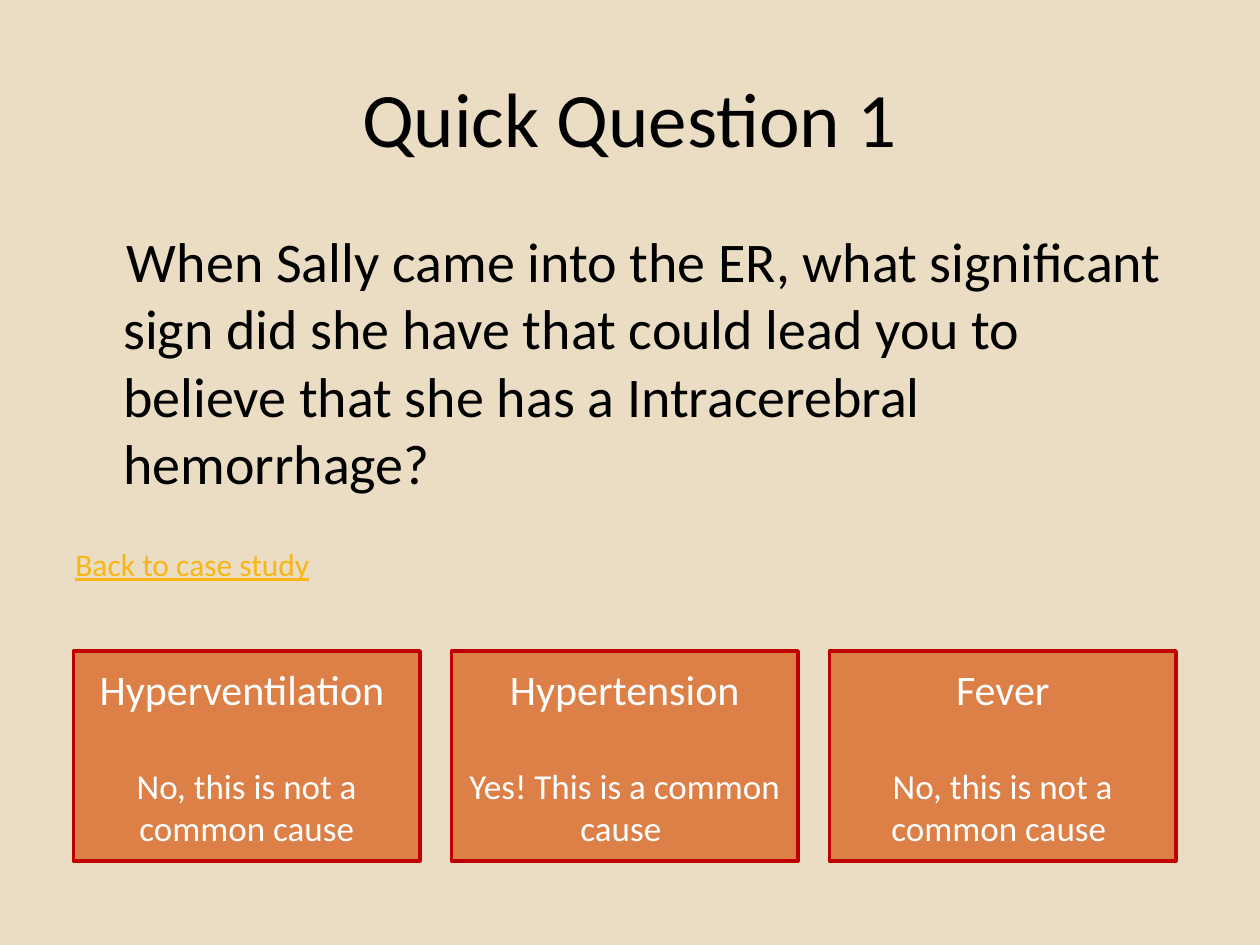
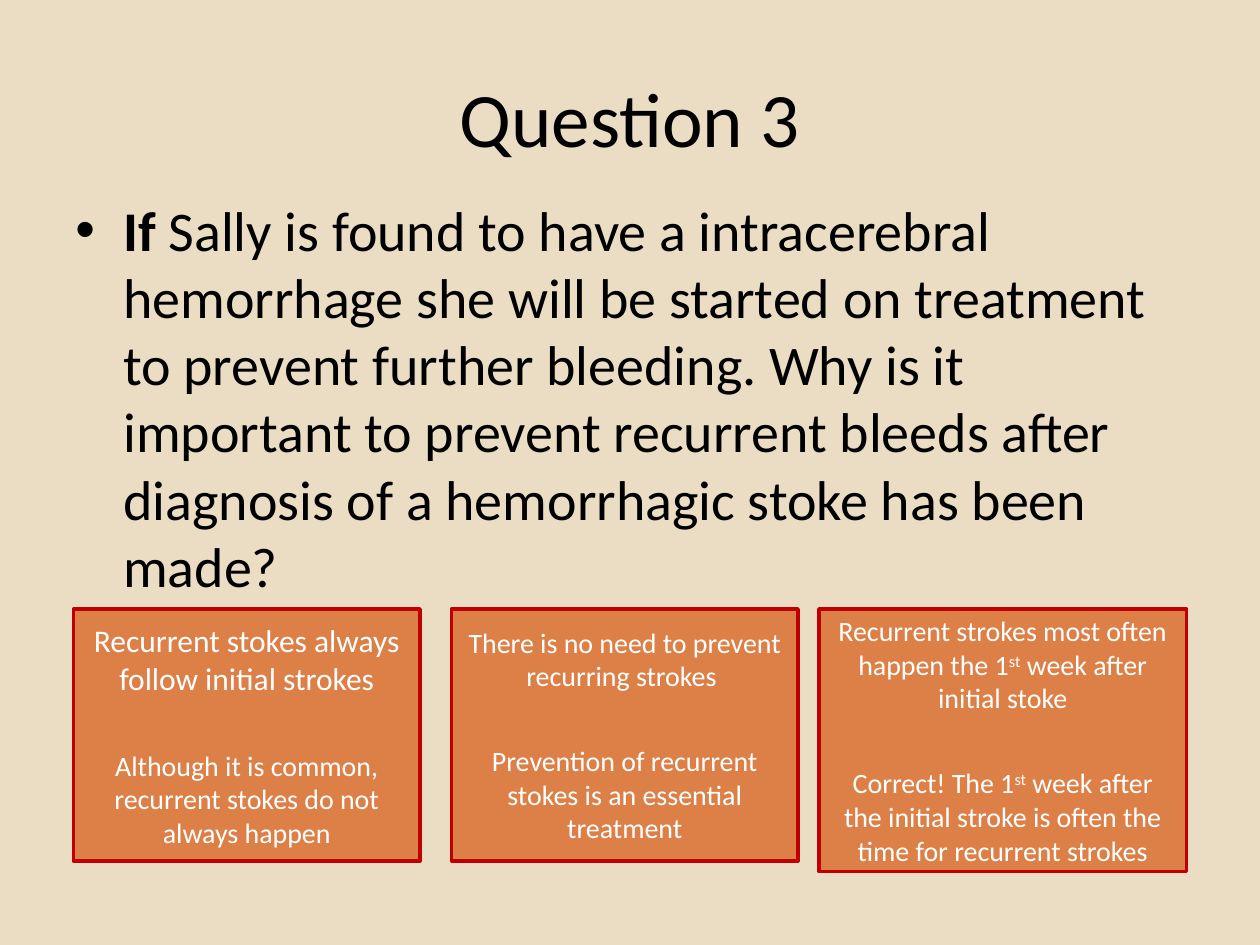
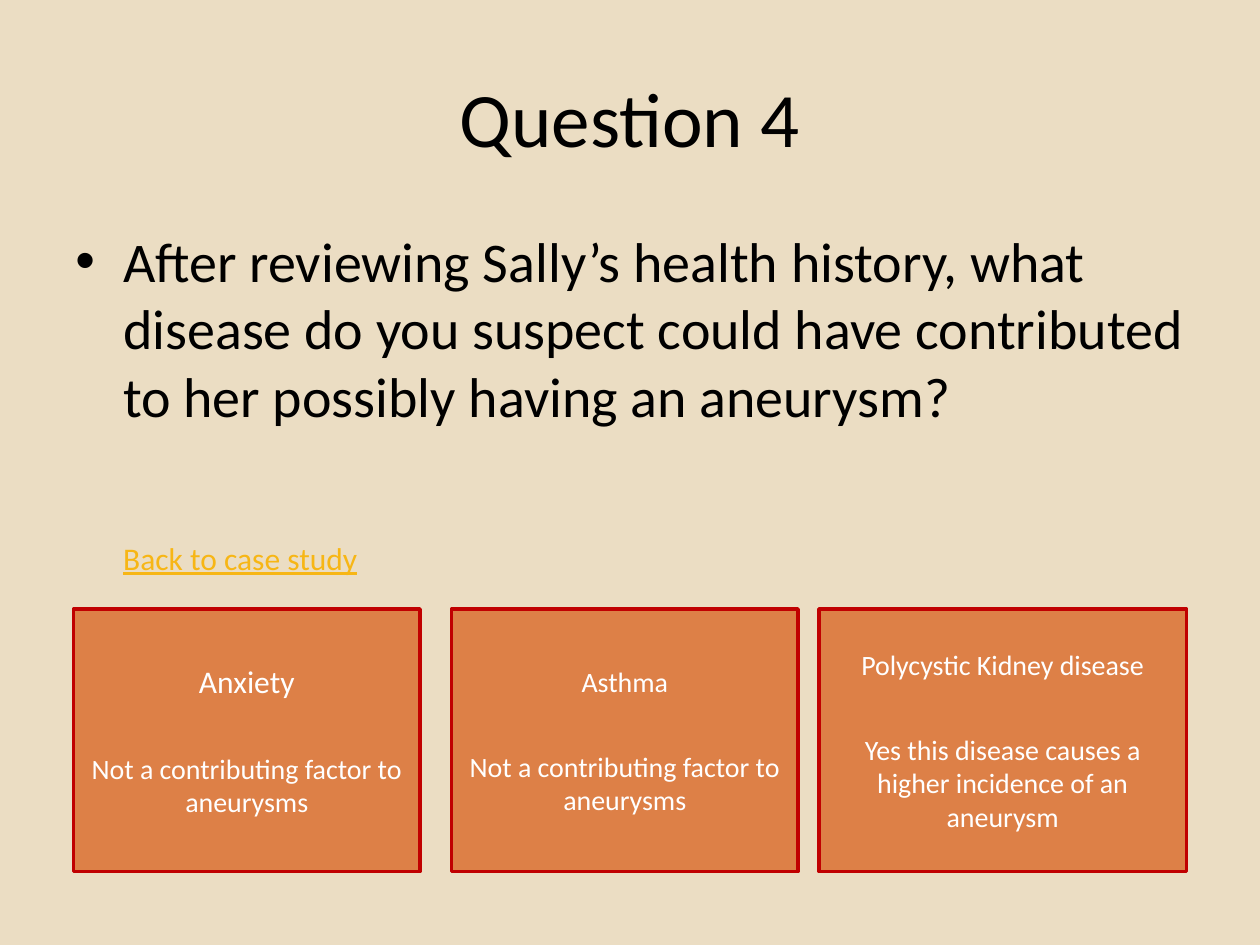
import pptx
import pptx.dml.color
import pptx.enum.shapes
import pptx.enum.text
import pptx.util
import lxml.etree
from dataclasses import dataclass
from typing import Any, NamedTuple

COLUMNS, ROWS = 120, 90
SLIDE_WIDTH = pptx.util.Inches(10)
SLIDE_HEIGHT = pptx.util.Inches(7.5)

SAND, ORANGE, RED = "EBDDC3", "DD8047", "C00000"
BLACK, WHITE, GOLD = "000000", "FFFFFF", "F7B615"
FONT = "Calibri"

CARD_LEFT, CARD_WIDTH, CARD_PITCH = 7, 33, 36
BODY_END = 58
ANSWER_GAP = 29.3
HANGING = 0.38

CENTER = pptx.enum.text.PP_ALIGN.CENTER
MIDDLE = pptx.enum.text.MSO_ANCHOR.MIDDLE


class Area(NamedTuple):
    column: float
    row: float
    columns: float
    rows: float


class Span(NamedTuple):
    text: str
    bold: bool = False
    superscript: bool = False


@dataclass
class Answer:
    choice: list[Span]
    feedback: list[Span]
    choice_size: int = 16
    feedback_size: int = 16
    rows: int = 25
    widening: int = 0


@dataclass
class BackLink:
    gap: float
    left: float = 0


@dataclass
class Question:
    title: str
    prompt: list[Span]
    answers: list[Answer]
    body_row: int = 21
    card_row: int = 58
    first_indent: float = -HANGING
    bulleted: bool = True
    back_link: BackLink | None = None


TITLE_AREA = Area(6, 3.6, 108, 15)

QUESTIONS = [
    Question(
        "Quick Question 1",
        [Span("When Sally came into the ER, what significant sign did she have "
              "that could lead you to believe that she has a Intracerebral hemorrhage?")],
        [
            Answer([Span("Hyperventilation ")], [Span("No, this is not a common cause")], 24, 20, 20),
            Answer([Span("Hypertension")], [Span("Yes! This is a common cause ")], 24, 20, 20),
            Answer([Span("Fever")], [Span("No, this is not a common cause ")], 24, 20, 20),
        ],
        card_row=62,
        first_indent=0.03,
        bulleted=False,
        back_link=BackLink(28),
    ),
    Question(
        "Question 3",
        [Span("If", bold=True),
         Span(" Sally is found to have a intracerebral hemorrhage she will be started on "
              "treatment to prevent further bleeding. Why is it important to prevent recurrent "
              "bleeds after diagnosis of a hemorrhagic stoke has been made?")],
        [
            Answer([Span("Recurrent stokes always follow initial strokes")],
                   [Span("Although it is common, recurrent stokes do not always happen")],
                   choice_size=18, rows=24),
            Answer([Span("There is no need to prevent recurring strokes ")],
                   [Span("Prevention of recurrent stokes is an essential treatment")], rows=24),
            Answer([Span("Recurrent strokes most often happen the 1"), Span("st", superscript=True),
                    Span(" week after initial stoke")],
                   [Span("Correct! The 1"), Span("st", superscript=True),
                    Span(" week after the initial stroke is often the time for recurrent strokes")],
                   widening=1),
        ],
        body_row=18,
    ),
    Question(
        "Question 4",
        [Span("After reviewing Sally’s health history, what disease do you suspect "
              "could have contributed to her possibly having an aneurysm?")],
        [
            Answer([Span("Anxiety")], [Span("Not a contributing factor to aneurysms")], choice_size=18),
            Answer([Span("Asthma")], [Span("Not a contributing factor to aneurysms")]),
            Answer([Span("Polycystic Kidney disease")],
                   [Span("Yes this disease causes a higher incidence of an aneurysm")], widening=1),
        ],
        back_link=BackLink(63, HANGING),
    ),
]


def color(code: str) -> pptx.dml.color.RGBColor:
    return pptx.dml.color.RGBColor.from_string(code)


def apply(target: Any, values: dict[str, Any]) -> None:
    for name, value in values.items():
        setattr(target, name, value)


def place(area: Area) -> dict[str, int]:
    return {
        "left": round(SLIDE_WIDTH * area.column / COLUMNS),
        "top": round(SLIDE_HEIGHT * area.row / ROWS),
        "width": round(SLIDE_WIDTH * area.columns / COLUMNS),
        "height": round(SLIDE_HEIGHT * area.rows / ROWS),
    }


def write(paragraph: Any, spans: list[Span], size: int, ink: str, underline: bool = False) -> None:
    for span in spans:
        run = paragraph.add_run()
        run.text = span.text
        apply(run.font, {"name": FONT, "size": pptx.util.Pt(size),
                         "bold": span.bold, "underline": underline})
        run.font.color.rgb = color(ink)
        if span.superscript:
            run._r.get_or_add_rPr().set("baseline", "30000")


def indent(paragraph: Any, left: float, first: float, bulleted: bool) -> None:
    properties = paragraph._p.get_or_add_pPr()
    properties.set("marL", str(pptx.util.Inches(left)))
    properties.set("indent", str(pptx.util.Inches(first)))
    if bulleted:
        for tag, values in {"a:buFont": {"typeface": "Arial"}, "a:buChar": {"char": "•"}}.items():
            lxml.etree.SubElement(properties, pptx.oxml.ns.qn(tag), values)


def draw_title(slide: Any, wording: str) -> None:
    title = slide.shapes.title
    apply(title, place(TITLE_AREA))
    apply(title.text_frame, {"vertical_anchor": MIDDLE, "word_wrap": True})
    heading = title.text_frame.paragraphs[0]
    heading.alignment = CENTER
    write(heading, [Span(wording)], 44, BLACK)


def draw_answer(slide: Any, answer: Answer, position: int, row: int) -> None:
    area = Area(CARD_LEFT + position * CARD_PITCH - answer.widening, row,
                CARD_WIDTH + 2 * answer.widening, answer.rows)
    card = slide.shapes.add_shape(pptx.enum.shapes.MSO_SHAPE.RECTANGLE, **place(area))
    card.shadow.inherit = False
    card.fill.solid()
    card.fill.fore_color.rgb = color(ORANGE)
    card.line.color.rgb = color(RED)
    card.line.width = pptx.util.Pt(2)
    frame = card.text_frame
    apply(frame, {"vertical_anchor": MIDDLE, "word_wrap": True})
    choice, feedback = frame.paragraphs[0], frame.add_paragraph()
    choice.alignment = CENTER
    apply(feedback, {"alignment": CENTER, "space_before": pptx.util.Pt(ANSWER_GAP)})
    write(choice, answer.choice, answer.choice_size, WHITE)
    write(feedback, answer.feedback, answer.feedback_size, WHITE)


def draw_prompt(slide: Any, question: Question) -> None:
    area = Area(6, question.body_row, 108, BODY_END - question.body_row)
    frame = slide.shapes.add_textbox(**place(area)).text_frame
    frame.word_wrap = True
    prompt = frame.paragraphs[0]
    prompt.space_before = pptx.util.Pt(6.4)
    indent(prompt, HANGING, question.first_indent, question.bulleted)
    write(prompt, question.prompt, 32, BLACK)
    if question.back_link:
        back = frame.add_paragraph()
        back.space_before = pptx.util.Pt(question.back_link.gap)
        indent(back, question.back_link.left, 0, False)
        write(back, [Span("Back to case study")], 18, GOLD, underline=True)


def main() -> None:
    deck = pptx.Presentation()
    apply(deck, {"slide_width": SLIDE_WIDTH, "slide_height": SLIDE_HEIGHT})
    backdrop = deck.slide_master.background.fill
    backdrop.solid()
    backdrop.fore_color.rgb = color(SAND)
    title_only = deck.slide_layouts[5]
    for question in QUESTIONS:
        slide = deck.slides.add_slide(title_only)
        draw_title(slide, question.title)
        for position, answer in enumerate(question.answers):
            draw_answer(slide, answer, position, question.card_row)
        draw_prompt(slide, question)
    deck.save("out.pptx")


if __name__ == "__main__":
    main()
